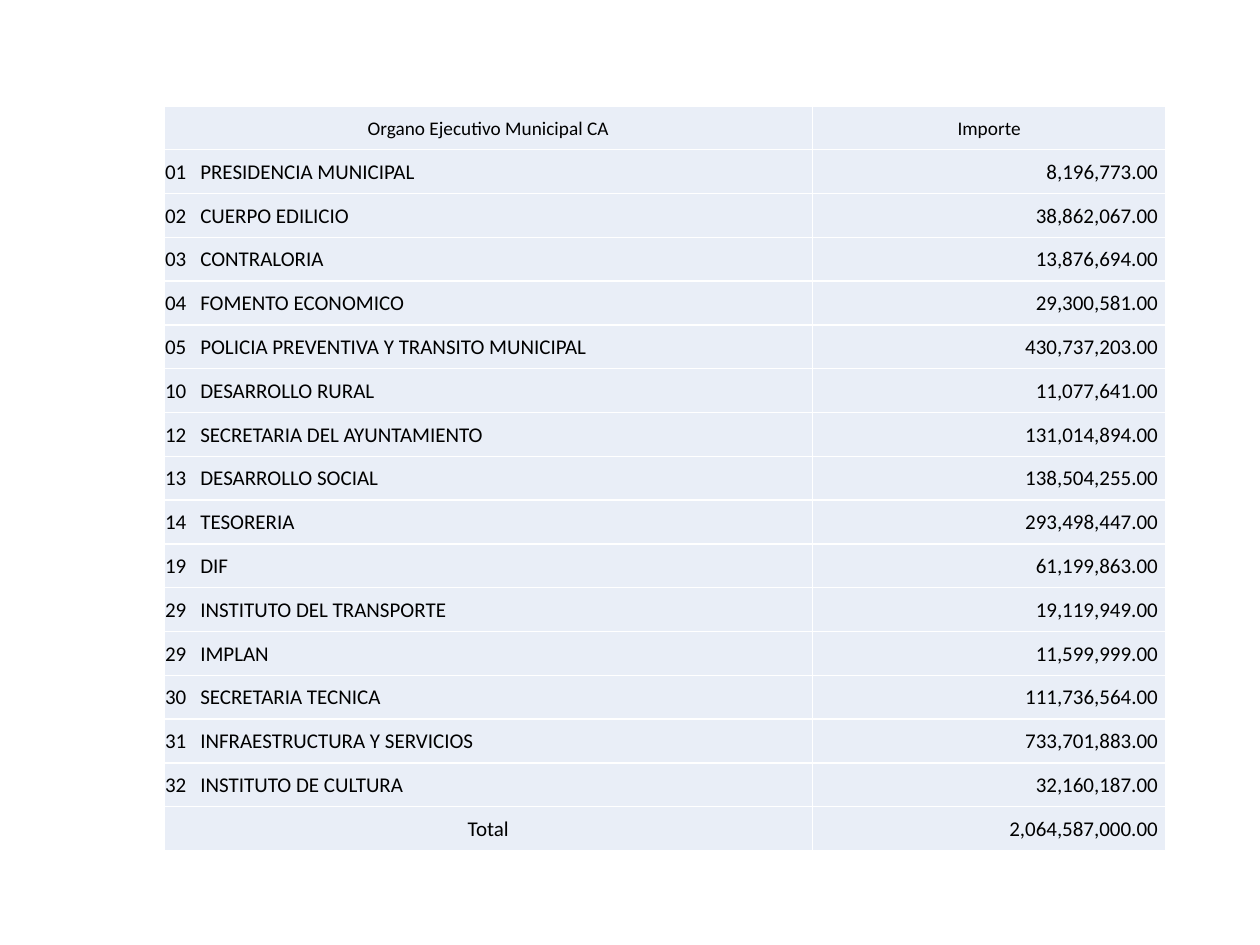
import pptx
import pptx.util
import pptx.dml.color
import pptx.enum.text
import pptx.oxml.ns
import lxml.etree

Inches = pptx.util.Inches
ALIGN = pptx.enum.text.PP_ALIGN
BLACK = pptx.dml.color.RGBColor(0x00, 0x00, 0x00)
WHITE = pptx.dml.color.RGBColor(0xFF, 0xFF, 0xFF)
PALE_BLUE = pptx.dml.color.RGBColor(0xE9, 0xEE, 0xF7)

HEADER = ("Organo Ejecutivo Municipal CA", "Importe")
DEPARTMENTS = [
    ("01", "PRESIDENCIA MUNICIPAL", "8,196,773.00"),
    ("02", "CUERPO EDILICIO", "38,862,067.00"),
    ("03", "CONTRALORIA", "13,876,694.00"),
    ("04", "FOMENTO ECONOMICO", "29,300,581.00"),
    ("05", "POLICIA PREVENTIVA Y TRANSITO MUNICIPAL", "430,737,203.00"),
    ("10", "DESARROLLO RURAL", "11,077,641.00"),
    ("12", "SECRETARIA DEL AYUNTAMIENTO", "131,014,894.00"),
    ("13", "DESARROLLO SOCIAL", "138,504,255.00"),
    ("14", "TESORERIA", "293,498,447.00"),
    ("19", "DIF", "61,199,863.00"),
    ("29", "INSTITUTO DEL TRANSPORTE", "19,119,949.00"),
    ("29", "IMPLAN", "11,599,999.00"),
    ("30", "SECRETARIA TECNICA", "111,736,564.00"),
    ("31", "INFRAESTRUCTURA Y SERVICIOS", "733,701,883.00"),
    ("32", "INSTITUTO DE CULTURA", "32,160,187.00"),
]
TOTAL = ("Total", "2,064,587,000.00")

SLIDE_SIZE = (10, 7.5)
TABLE_LEFT, TABLE_TOP, TABLE_HEIGHT = 1.3, 0.84, 5.91
COLUMN_WIDTHS = (5.15, 2.8)
NAME_INDENT = 0.28
AMOUNT_INSET = 0.06
CELL_FORMAT = {
    "margin_left": Inches(0.01),
    "margin_right": Inches(0.01),
    "margin_top": Inches(0.01),
    "margin_bottom": 0,
    "vertical_anchor": pptx.enum.text.MSO_ANCHOR.MIDDLE,
}


def add_element(parent, tag, **attributes):
    return lxml.etree.SubElement(parent, pptx.oxml.ns.qn(tag), attributes)


def add_borders(cell):
    properties = cell._tc.get_or_add_tcPr()
    for side in ("a:lnL", "a:lnR", "a:lnT", "a:lnB"):
        line = add_element(properties, side, w=str(pptx.util.Pt(1)))
        add_element(add_element(line, "a:solidFill"), "a:srgbClr", val=str(WHITE))


def fill_cell(cell, text, alignment, size):
    add_borders(cell)
    cell.fill.solid()
    cell.fill.fore_color.rgb = PALE_BLUE
    for name, value in CELL_FORMAT.items():
        setattr(cell, name, value)
    if alignment == ALIGN.RIGHT:
        cell.margin_right = Inches(AMOUNT_INSET)
    paragraph = cell.text_frame.paragraphs[0]
    paragraph.alignment = alignment
    if alignment == ALIGN.LEFT:
        tabs = add_element(paragraph._p.get_or_add_pPr(), "a:tabLst")
        add_element(tabs, "a:tab", pos=str(Inches(NAME_INDENT)), algn="l")
    run = paragraph.add_run()
    run.text = text
    font_format = {"name": "Calibri", "size": pptx.util.Pt(size), "bold": False}
    for name, value in font_format.items():
        setattr(run.font, name, value)
    run.font.color.rgb = BLACK


def main():
    presentation = pptx.Presentation()
    presentation.slide_width, presentation.slide_height = map(Inches, SLIDE_SIZE)
    slide = presentation.slides.add_slide(presentation.slide_layouts[6])

    rows = [(HEADER, (ALIGN.CENTER, ALIGN.CENTER), 11)]
    rows += [((f"{code}\t{name}", amount), (ALIGN.LEFT, ALIGN.RIGHT), 12)
             for code, name, amount in DEPARTMENTS]
    rows.append((TOTAL, (ALIGN.CENTER, ALIGN.RIGHT), 12))

    table = slide.shapes.add_table(
        len(rows), len(COLUMN_WIDTHS), Inches(TABLE_LEFT), Inches(TABLE_TOP),
        Inches(sum(COLUMN_WIDTHS)), Inches(TABLE_HEIGHT)).table
    for column, width in zip(table.columns, COLUMN_WIDTHS):
        column.width = Inches(width)
    for table_row, (texts, alignments, size) in zip(table.rows, rows):
        for cell, text, alignment in zip(table_row.cells, texts, alignments):
            fill_cell(cell, text, alignment, size)

    presentation.save("out.pptx")


if __name__ == "__main__":
    main()
